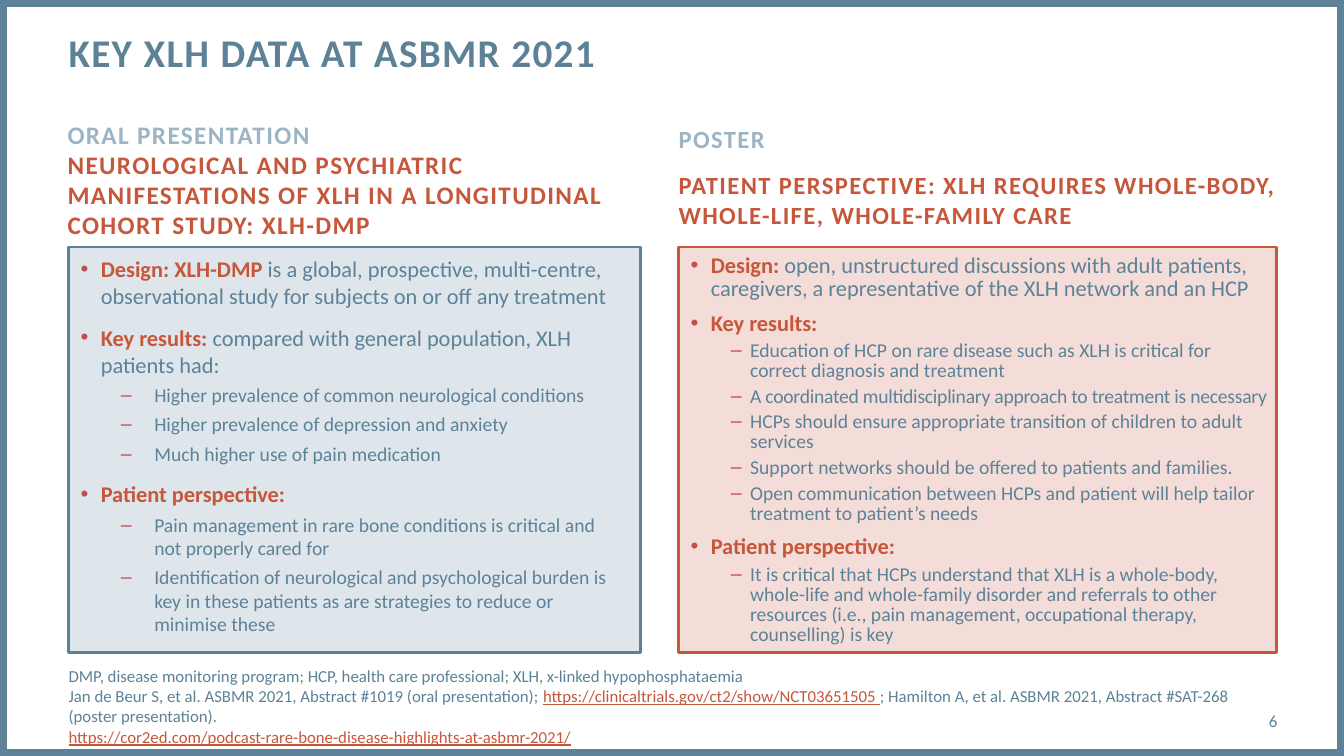
from dataclasses import dataclass
from typing import Any

from lxml import etree
from pptx import Presentation
from pptx.dml.color import RGBColor
from pptx.enum import shapes, text
from pptx.oxml import ns
from pptx.util import Inches, Length, Pt

SLATE = RGBColor(0x5D, 0x82, 0x98)
MIST = RGBColor(0x9C, 0xB4, 0xC3)
RUST = RGBColor(0xC6, 0x57, 0x3B)
BULLET_RED = RGBColor(0xC0, 0x50, 0x4D)
PALE_BLUE = RGBColor(0xDE, 0xE6, 0xEB)
PALE_PINK = RGBColor(0xF4, 0xDD, 0xD8)


@dataclass(frozen=True)
class Span:
    text: str
    color: RGBColor = SLATE
    bold: bool = False
    underline: bool = False
    tracking: float = 0


@dataclass(frozen=True)
class Para:
    spans: tuple[Span, ...]
    size: float
    before: float = 0
    bullet: str = ""
    indent: float = 0
    hang: float = 0
    level: int = 0
    line_spacing: float = 1.0
    align: text.PP_ALIGN = text.PP_ALIGN.LEFT


@dataclass(frozen=True)
class Area:
    left: float
    top: float
    width: float
    height: float

    def lengths(self) -> tuple[Length, ...]:
        return tuple(Inches(n) for n in (self.left, self.top, self.width, self.height))


@dataclass(frozen=True)
class Panel:
    """A tinted list whose level-two items follow bold lead-ins."""
    area: Area
    fill: RGBColor
    line: RGBColor
    margins: tuple[float, float, float, float]
    topic_gap: float
    item_indent: float
    item_hang: float
    line_spacing: float
    content: tuple[tuple[str, str, tuple[Span, ...]], ...]

    def paras(self) -> list[Para]:
        result = []
        for number, (lead, rest, items) in enumerate(self.content):
            spans = (Span(lead, RUST, True),) + ((Span(rest),) if rest else ())
            result.append(Para(spans, 16, self.topic_gap if number else 0, "•",
                               0.2, 0.2, 0, self.line_spacing))
            result += [Para((item,), 14, 4, "–", self.item_indent, self.item_hang,
                            1, self.line_spacing) for item in items]
        return result


def set_values(target: Any, values: dict[str, Any]) -> None:
    for name, value in values.items():
        setattr(target, name, value)


def add_bullet(paragraph: Any, para: Para) -> None:
    properties = paragraph._p.get_or_add_pPr()
    properties.set("marL", str(Inches(para.indent)))
    properties.set("indent", str(-Inches(para.hang)))
    if not para.bullet:
        etree.SubElement(properties, ns.qn("a:buNone"))
        return
    color = etree.SubElement(properties, ns.qn("a:buClr"))
    etree.SubElement(color, ns.qn("a:srgbClr"), val=str(BULLET_RED))
    etree.SubElement(properties, ns.qn("a:buFont"), typeface="Arial")
    etree.SubElement(properties, ns.qn("a:buChar"), char=para.bullet)


def add_span(paragraph: Any, span: Span, size: float) -> None:
    for number, line in enumerate(span.text.split("\n")):
        if number:
            paragraph.add_line_break()
        if not line:
            continue
        run = paragraph.add_run()
        run.text = line
        set_values(run.font, {"name": "Calibri", "size": Pt(size), "bold": span.bold,
                              "underline": span.underline})
        run.font.color.rgb = span.color
        run.font._element.set("spc", str(round(span.tracking * 100)))


def write(box: Any, area: Area, paras: list[Para],
          margins: tuple[float, float, float, float] = (0, 0, 0, 0),
          anchor: text.MSO_ANCHOR = text.MSO_ANCHOR.TOP) -> None:
    """Place a box and fill it; margins run left, top, right, bottom."""
    sides = ("left", "top", "width", "height")
    set_values(box, dict(zip(sides, area.lengths())))
    frame = box.text_frame
    edges = ("margin_left", "margin_top", "margin_right", "margin_bottom")
    set_values(frame, dict(zip(edges, map(Inches, margins))))
    set_values(frame, {"word_wrap": True, "auto_size": text.MSO_AUTO_SIZE.NONE,
                       "vertical_anchor": anchor})
    for number, para in enumerate(paras):
        paragraph = frame.add_paragraph() if number else frame.paragraphs[0]
        set_values(paragraph, {"level": para.level, "alignment": para.align,
                               "line_spacing": para.line_spacing,
                               "space_before": Pt(para.before), "space_after": Pt(0)})
        add_bullet(paragraph, para)
        for span in para.spans:
            add_span(paragraph, span, para.size)


def draw_panel(box: Any, panel: Panel) -> None:
    write(box, panel.area, panel.paras(), panel.margins)
    box.fill.solid()
    box.fill.fore_color.rgb = panel.fill
    box.line.color.rgb = panel.line
    box.line.width = Pt(2)


def heading(words: str, color: RGBColor, size: float, before: float = 0) -> Para:
    return Para((Span(words, color, True, tracking=1),), size, before)


ORAL = Panel(Area(0.68, 2.45, 5.67, 4.02), PALE_BLUE, SLATE, (0.12, 0.08, 0.12, 0.04),
             10.8, 0.73, 0.33, 1.0, (
    ("Design: XLH-DMP", " is a global, prospective, multi-centre, observational study "
     "for subjects on or off any treatment", ()),
    ("Key results: ", "compared with general population, XLH patients had:", (
        Span("Higher prevalence of common neurological conditions"),
        Span("Higher prevalence of depression and anxiety"),
        Span("Much higher use of pain medication"))),
    ("Patient perspective:", "", (
        Span("Pain management in rare bone conditions is critical and \nnot properly cared for"),
        Span("Identification of neurological and psychological burden is key in these "
             "patients as are strategies to reduce or minimise these"))),
))
POSTER = Panel(Area(6.73, 2.45, 5.93, 4.02), PALE_PINK, RUST, (0.12, 0.08, 0.08, 0),
               9, 0.59, 0.19, 0.85, (
    ("Design: ", "open, unstructured discussions with adult patients, caregivers, "
     "a representative of the XLH network and an HCP", ()),
    ("Key results:", "", (
        Span("Education of HCP on rare disease such as XLH is critical for correct "
             "diagnosis and treatment"),
        Span("A coordinated multidisciplinary approach to treatment is necessary", tracking=-0.2),
        Span("HCPs should ensure appropriate transition of children to adult services"),
        Span("Support networks should be offered to patients and families."),
        Span("Open communication between HCPs and patient will help tailor treatment "
             "to patient’s needs"))),
    ("Patient perspective:", "", (
        Span("It is critical that HCPs understand that XLH is a whole-body, whole-life and "
             "whole-family disorder and referrals to other resources (i.e., pain management, "
             "occupational therapy, counselling) is key"),)),
))
FOOTNOTES = [
    Para((Span("DMP, disease monitoring program; HCP, health care professional; "
               "XLH, x-linked hypophosphataemia"),), 12),
    Para((Span("Jan de Beur S, et al. ASBMR 2021, Abstract #1019 (oral presentation); "),
          Span("https://clinicaltrials.gov/ct2/show/NCT03651505 ", RUST, underline=True),
          Span("; Hamilton A, et al. ASBMR 2021, Abstract #SAT-268 (poster presentation). \n"),
          Span("https://cor2ed.com/podcast-rare-bone-disease-highlights-at-asbmr-2021/",
               RUST, underline=True)), 12),
]


def main() -> None:
    deck = Presentation()
    deck.slide_width, deck.slide_height = Inches(13.33), Inches(7.5)
    page = deck.slides.add_slide(deck.slide_layouts.get_by_name("Comparison"))
    title, oral_heading, oral_list, poster_heading, poster_list = page.placeholders

    border = page.shapes.add_shape(shapes.MSO_SHAPE.RECTANGLE, 0, 0,
                                   deck.slide_width, deck.slide_height)
    border.shadow.inherit = False
    border.fill.background()
    border.line.color.rgb = SLATE
    border.line.width = Pt(10)
    title._element.addprevious(border._element)

    write(title, Area(0.68, 0.28, 9.56, 0.95),
          [heading("KEY XLH DATA AT ASBMR 2021", SLATE, 28)])
    write(oral_heading, Area(0.67, 1.18, 5.67, 0.95), [
        heading("ORAL PRESENTATION", MIST, 18),
        heading("NEUROLOGICAL AND PSYCHIATRIC MANIFESTATIONS OF XLH IN A LONGITUDINAL "
                "COHORT STUDY: XLH-DMP", RUST, 18)])
    write(poster_heading, Area(6.73, 1.23, 5.93, 1.06), [
        heading("POSTER", MIST, 17.6),
        heading("PATIENT PERSPECTIVE: XLH REQUIRES WHOLE-BODY, WHOLE-LIFE, "
                "WHOLE-FAMILY CARE", RUST, 17.6, 12)])
    draw_panel(oral_list, ORAL)
    draw_panel(poster_list, POSTER)

    number_para = Para((Span("6"),), 12, align=text.PP_ALIGN.RIGHT)
    for area, paras in ((Area(11.5, 6.95, 1.17, 0.4), [number_para]),
                        (Area(0.68, 6.8, 11.98, 0.41), FOOTNOTES)):
        box = page.shapes.add_textbox(*area.lengths())
        write(box, area, paras, anchor=text.MSO_ANCHOR.MIDDLE)
    deck.save("out.pptx")


if __name__ == "__main__":
    main()
